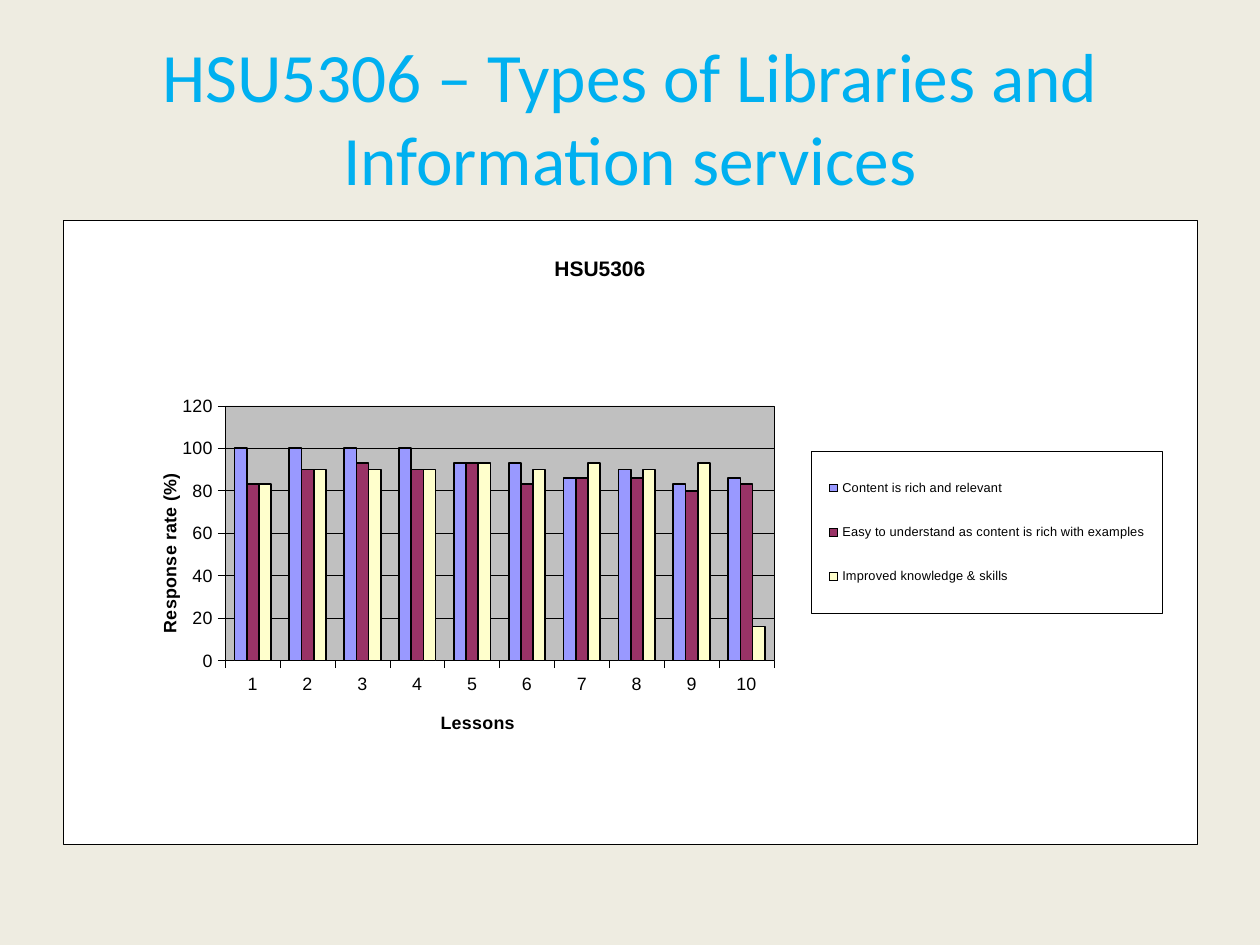
from dataclasses import dataclass

from lxml import etree
from pptx import Presentation
from pptx.chart.data import CategoryChartData
from pptx.dml.color import RGBColor
from pptx.enum.chart import XL_CHART_TYPE as ChartType, XL_LEGEND_POSITION as LegendPosition
from pptx.enum.chart import XL_TICK_MARK as TickMark
from pptx.enum.text import MSO_ANCHOR as Anchor, PP_ALIGN as Align
from pptx.oxml import parse_xml
from pptx.oxml.ns import nsdecls, qn
from pptx.util import Inches, Pt


@dataclass(frozen=True)
class Theme:
    background: str = "EEECE1"
    heading: str = "00B0F0"
    ink: str = "000000"
    paper: str = "FFFFFF"
    plot: str = "C0C0C0"
    series: tuple = ("9999FF", "993366", "FFFFCC")
    heading_font: str = "Calibri"
    chart_font: str = "Arial"
    heading_size: float = 39.6
    chart_title_size: float = 12
    axis_size: float = 10.2
    legend_size: float = 7.3
    hairline: float = 0.25
    bar_line: float = 1


LESSONS = [str(number) for number in range(1, 11)]
RESPONSES = {
    "Content is rich and relevant": (100, 100, 100, 100, 93, 93, 86, 90, 83, 86),
    "Easy to understand as content is rich with examples": (83, 90, 93, 90, 93, 83, 86, 86, 80, 83),
    "Improved knowledge & skills": (83, 90, 90, 90, 93, 90, 93, 90, 93, 16),
}


def frame_properties(fill, line, width):
    return parse_xml(
        f'<c:spPr {nsdecls("c", "a")}>'
        f'<a:solidFill><a:srgbClr val="{fill}"/></a:solidFill>'
        f'<a:ln w="{Pt(width)}"><a:solidFill><a:srgbClr val="{line}"/></a:solidFill></a:ln>'
        "</c:spPr>"
    )


def place(element, index, x, y, w=None, h=None, inner=False):
    """Give a chart part a manual layout, in fractions of the chart area."""
    old = element.find(qn("c:layout"))
    if old is not None:
        element.remove(old)
    layout = etree.Element(qn("c:layout"))
    manual = etree.SubElement(layout, qn("c:manualLayout"))
    settings = [("layoutTarget", "inner")] if inner else []
    settings += [("xMode", "edge"), ("yMode", "edge"), ("x", x), ("y", y), ("w", w), ("h", h)]
    for name, value in settings:
        if value is not None:
            etree.SubElement(manual, qn(f"c:{name}")).set("val", str(value))
    element.insert(index, layout)


class Deck:
    def __init__(self, theme):
        self.theme = theme
        self.presentation = Presentation()
        self.presentation.slide_width = Inches(10)
        self.presentation.slide_height = Inches(7.5)
        self.page = None

    def add_page(self):
        self.page = self.presentation.slides.add_slide(self.presentation.slide_layouts[6])
        fill = self.page.background.fill
        fill.solid()
        fill.fore_color.rgb = RGBColor.from_string(self.theme.background)

    def style_font(self, font, size, color, name, bold=False):
        font.size, font.name, font.bold = Pt(size), name, bold
        font.color.rgb = RGBColor.from_string(color)

    def style_line(self, line, width):
        line.color.rgb = RGBColor.from_string(self.theme.ink)
        line.width = Pt(width)

    def add_heading(self, text, left, top, width, height):
        box = self.page.shapes.add_textbox(Inches(left), Inches(top), Inches(width), Inches(height))
        frame = box.text_frame
        frame.word_wrap = True
        frame.vertical_anchor = Anchor.MIDDLE
        para = frame.paragraphs[0]
        para.alignment = Align.CENTER
        span = para.add_run()
        span.text = text
        self.style_font(span.font, self.theme.heading_size, self.theme.heading, self.theme.heading_font)

    def write_chart_title(self, title, text, size, x, y, rotation=0):
        span = title.text_frame.paragraphs[0].add_run()
        span.text = text
        self.style_font(span.font, size, self.theme.ink, self.theme.chart_font, bold=True)
        element = title.text_frame._txBody.getparent().getparent()
        element.find(".//" + qn("a:bodyPr")).set("rot", str(rotation * 60000))
        place(element, 1, x, y)

    def style_axis(self, axis, text, x, y, rotation=0):
        theme = self.theme
        axis.major_tick_mark = TickMark.OUTSIDE
        axis.minor_tick_mark = TickMark.NONE
        self.style_font(axis.tick_labels.font, theme.axis_size, theme.ink, theme.chart_font)
        self.style_line(axis.format.line, theme.hairline)
        self.write_chart_title(axis.axis_title, text, theme.axis_size, x, y, rotation)

    def add_column_chart(self, title, categories, values, left, top, width, height):
        theme = self.theme
        data = CategoryChartData()
        data.categories = categories
        for name, numbers in values.items():
            data.add_series(name, numbers)
        chart = self.page.shapes.add_chart(
            ChartType.COLUMN_CLUSTERED, Inches(left), Inches(top), Inches(width), Inches(height), data
        ).chart
        self.style_font(chart.font, theme.axis_size, theme.ink, theme.chart_font)
        self.write_chart_title(chart.chart_title, title, theme.chart_title_size, 0.43, 0.05)

        plot = chart.plots[0]
        plot.gap_width, plot.overlap, plot.vary_by_categories = 150, 0, False
        for series, color in zip(plot.series, theme.series):
            series.format.fill.solid()
            series.format.fill.fore_color.rgb = RGBColor.from_string(color)
            self.style_line(series.format.line, theme.bar_line)

        self.style_axis(chart.category_axis, "Lessons", 0.33, 0.78)
        self.style_axis(chart.value_axis, "Response rate (%)", 0.08, 0.4, rotation=-90)
        chart.value_axis.minimum_scale, chart.value_axis.maximum_scale = 0, 120
        chart.value_axis.major_unit = 20
        self.style_line(chart.value_axis.major_gridlines.format.line, theme.hairline)

        chart.has_legend = True
        legend = chart.legend
        legend.position = LegendPosition.RIGHT
        legend.include_in_layout = False
        self.style_font(legend.font, theme.legend_size, theme.ink, theme.chart_font)
        legend_element = legend._element
        place(legend_element, 1, 0.66, 0.37, 0.31, 0.26)
        legend_element.find(qn("c:txPr")).addprevious(
            frame_properties(theme.paper, theme.ink, theme.hairline)
        )

        chart_element = chart._chartSpace.find(qn("c:chart"))
        plot_area = chart_element.find(qn("c:plotArea"))
        place(plot_area, 0, 0.143, 0.297, 0.484, 0.409, inner=True)
        plot_area.append(frame_properties(theme.plot, theme.ink, theme.hairline))
        chart_element.addnext(frame_properties(theme.paper, theme.ink, theme.hairline))


def main():
    deck = Deck(Theme())
    deck.add_page()
    deck.add_heading("HSU5306 – Types of Libraries and Information services", 0.5, 0.3, 9, 1.25)
    deck.add_column_chart("HSU5306", LESSONS, RESPONSES, 0.5, 1.75, 9, 4.95)
    deck.presentation.save("out.pptx")


if __name__ == "__main__":
    main()
